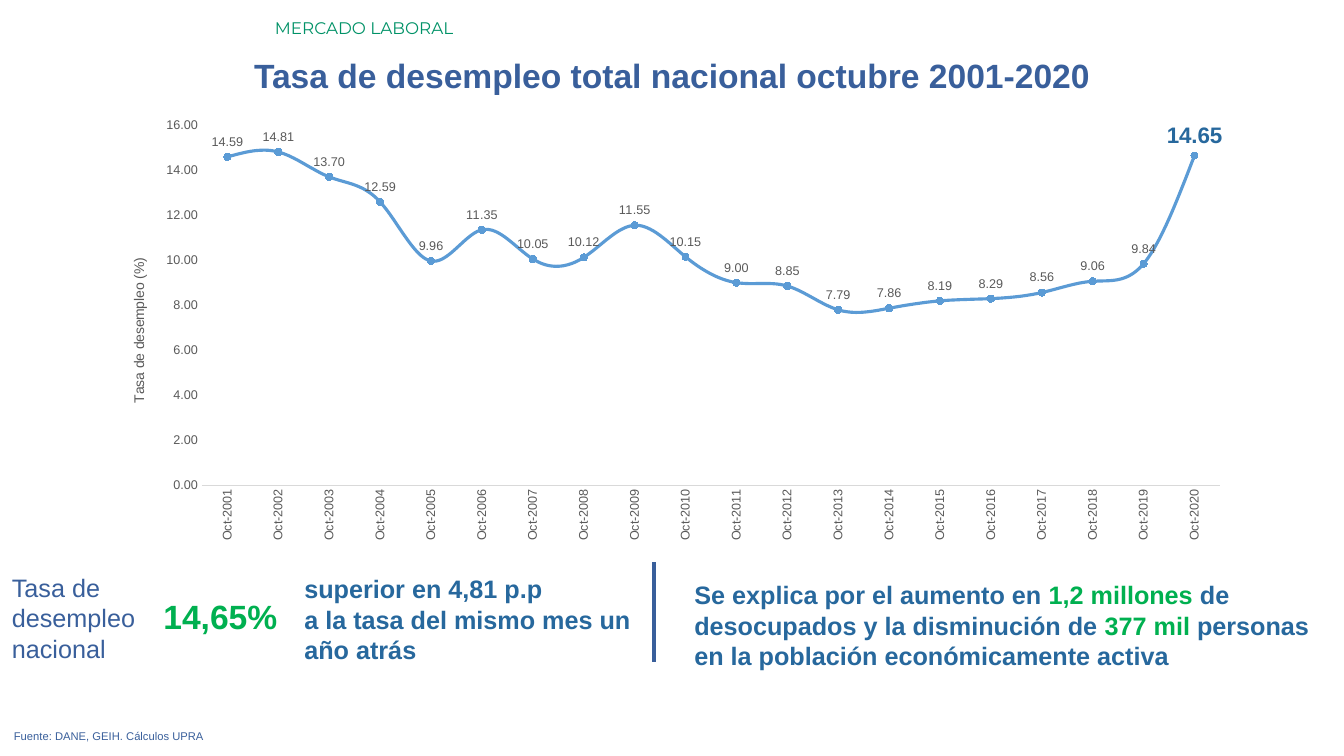
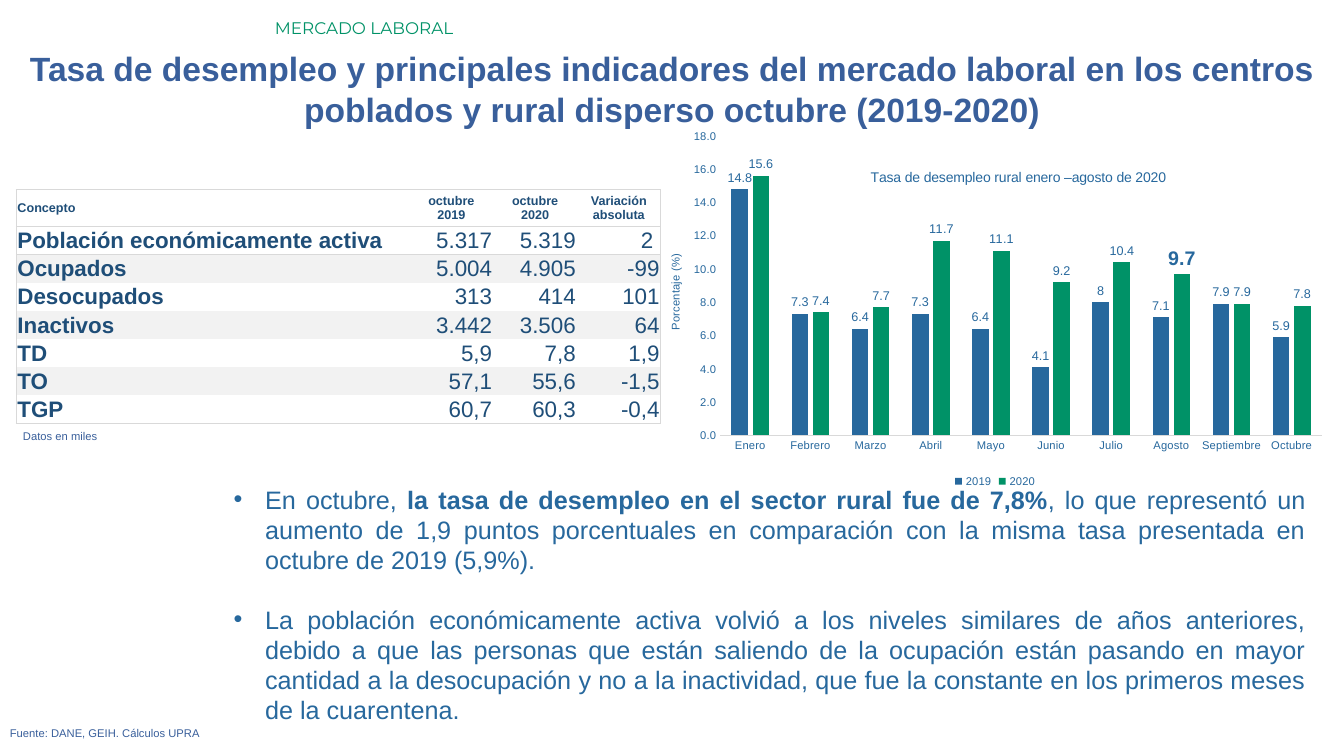
from lxml import etree
from pptx import Presentation
from pptx.chart.data import CategoryChartData
from pptx.dml.color import RGBColor
from pptx.enum.chart import (XL_CHART_TYPE, XL_LABEL_POSITION, XL_LEGEND_POSITION,
                             XL_MARKER_STYLE, XL_TICK_MARK)
from pptx.enum.shapes import MSO_CONNECTOR
from pptx.enum.text import MSO_ANCHOR, PP_ALIGN
from pptx.oxml.ns import qn
from pptx.util import Cm, Pt

LEFT, CENTER, RIGHT, JUSTIFY = PP_ALIGN.LEFT, PP_ALIGN.CENTER, PP_ALIGN.RIGHT, PP_ALIGN.JUSTIFY
MIDDLE = MSO_ANCHOR.MIDDLE
LINE, COLUMN = XL_CHART_TYPE.LINE_MARKERS, XL_CHART_TYPE.COLUMN_CLUSTERED
ABOVE, OUTSIDE = XL_LABEL_POSITION.ABOVE, XL_LABEL_POSITION.OUTSIDE_END
CIRCLE = XL_MARKER_STYLE.CIRCLE
NO_TICK = XL_TICK_MARK.NONE
BOTTOM = XL_LEGEND_POSITION.BOTTOM
STRAIGHT = MSO_CONNECTOR.STRAIGHT
PLAIN_TABLE = "{2D5ABB26-0587-4C30-8999-92F81FD0307C}"

COLORS = {
    "navy": "395F9B", "blue": "27689D", "green": "009267", "bright": "00B050",
    "table": "1F4E78", "rule": "D9D9D9", "band": "F2F2F2", "white": "FFFFFF",
    "grey": "595959", "line": "5B9BD5",
}


def rgb(name):
    return RGBColor.from_string(COLORS[name])


def set_font(font, **fmt):
    for key, value in {"name": "Arial", "bold": False, **fmt}.items():
        if key == "color":
            font.color.rgb = rgb(value)
        else:
            setattr(font, key, Pt(value) if key == "size" else value)


def set_bullet(p, indent=Cm(0.79)):
    pPr = p._p.get_or_add_pPr()
    pPr.set("marL", str(indent))
    pPr.set("indent", str(-indent))
    etree.SubElement(pPr, qn("a:buFont")).set("typeface", "Arial")
    etree.SubElement(pPr, qn("a:buChar")).set("char", "•")


def write(tf, paras, align=LEFT, bullet=False, gap=0, **fmt):
    """Fill a frame; a paragraph is a string or a list of (text, format) runs."""
    for i, runs in enumerate(paras):
        p = tf.add_paragraph() if i else tf.paragraphs[0]
        if i and gap:
            p.space_before = Pt(gap)
        if bullet:
            set_bullet(p)
        p.alignment = align
        for text, own in [(runs, {})] if isinstance(runs, str) else runs:
            r = p.add_run()
            r.text = text
            set_font(r.font, **{**fmt, **own})


def place(element, **values):
    """Give a chart part a manual layout in fractions of the chart."""
    for old in element.findall(qn("c:layout")):
        element.remove(old)
    layout = etree.Element(qn("c:layout"))
    manual = etree.SubElement(layout, qn("c:manualLayout"))
    modes = {"xMode": "edge", "yMode": "edge"}
    if "w" in values:
        modes = {"layoutTarget": "inner", **modes}
    for key, value in {**modes, **values}.items():
        etree.SubElement(manual, qn("c:" + key)).set("val", str(value))
    element.insert(0, layout)


def set_border(cell, sides):
    tcPr = cell._tc.get_or_add_tcPr()
    for side in sides:
        ln = etree.SubElement(tcPr, qn("a:ln" + side), w=str(Pt(0.5)))
        fill = etree.SubElement(ln, qn("a:solidFill"))
        etree.SubElement(fill, qn("a:srgbClr")).set("val", COLORS["rule"])


class Deck:
    """Shared style and the slide being built."""

    def __init__(self):
        self.prs = Presentation()
        self.prs.slide_width, self.prs.slide_height = Cm(33.87), Cm(19.05)

    def new_slide(self, title, title_top, footer_at):
        self.s = self.prs.slides.add_slide(self.prs.slide_layouts[6])
        self.text((6.68, 0.33, 27.18, 0.76), ["MERCADO LABORAL"],
                  name="Montserrat", size=12, color="green")
        self.text((0, title_top, 33.87, 1.27), [title], CENTER,
                  size=24, bold=True, color="navy")
        self.note((*footer_at, 32.79, 0.61), "Fuente: DANE, GEIH. Cálculos UPRA")

    def text(self, box, paras, align=LEFT, **fmt):
        tf = self.s.shapes.add_textbox(*map(Cm, box)).text_frame
        tf.word_wrap = True
        write(tf, paras, align, **fmt)

    def note(self, box, text):
        self.text(box, [text], JUSTIFY, size=8, color="navy")

    def divider(self, x, top, bottom):
        sp = self.s.shapes.add_connector(STRAIGHT, *map(Cm, (x, top, x, bottom)))
        sp.line.color.rgb = rgb("navy")
        sp.line.width = Pt(2.25)
        etree.SubElement(sp.element.spPr, qn("a:effectLst"))

    def table(self, left, top, widths, heights, rows):
        last_row, last_col = len(rows) - 1, len(widths) - 1
        frame = self.s.shapes.add_table(len(rows), len(widths), Cm(left), Cm(top),
                                        Cm(sum(widths)), Cm(sum(heights)))
        next(frame.element.iter(qn("a:tableStyleId"))).text = PLAIN_TABLE
        table = frame.table
        table.first_row = table.horz_banding = False
        for col, width in zip(table.columns, widths):
            col.width = Cm(width)
        for i, (row, height) in enumerate(zip(rows, heights)):
            table.rows[i].height = Cm(height)
            for j, value in enumerate(row):
                cell = table.cell(i, j)
                cell.margin_left = cell.margin_right = cell.margin_top = Cm(0.03)
                cell.margin_bottom = 0
                cell.vertical_anchor = MIDDLE
                edges = {"L": j == 0, "R": j == last_col, "T": i == 0,
                         "B": i in (0, 1, last_row)}
                set_border(cell, [side for side, drawn in edges.items() if drawn])
                cell.fill.solid()
                cell.fill.fore_color.rgb = rgb("band" if i and i % 2 == 0 else "white")
                align = LEFT if j == 0 else RIGHT if i else CENTER
                write(cell.text_frame, value.split("\n"), align, color="table",
                      size=16 if i else 9, bold=i == 0 or j == 0)

    def chart(self, kind, box, cats, series, plot_box, color, size, axis_title,
              axis_at, axis_title_size, top_value, axis_format):
        data = CategoryChartData()
        data.categories = cats
        for name, values in series.items():
            data.add_series(name, values)
        chart = self.s.shapes.add_chart(kind, *map(Cm, box), data).chart
        set_font(chart.font, size=size, color=color)
        chart.has_legend = chart.has_title = False
        chart.plots[0].vary_by_categories = False
        place(chart.element.find(".//" + qn("c:plotArea")), **dict(zip("xywh", plot_box)))

        cat, val = chart.category_axis, chart.value_axis
        for axis in (cat, val):
            axis.major_tick_mark = axis.minor_tick_mark = NO_TICK
            axis.has_major_gridlines = False
            set_font(axis.tick_labels.font, size=size, color=color)
        cat.format.line.color.rgb = rgb("rule")
        cat.format.line.width = Pt(0.75)
        val.format.line.fill.background()
        val.minimum_scale, val.maximum_scale, val.major_unit = 0, top_value, 2
        val.tick_labels.number_format = axis_format
        val.tick_labels.number_format_is_linked = False
        val.has_title = True
        self.chart_title(val.axis_title, axis_title, axis_at, axis_title_size, color)
        return chart

    def chart_title(self, title, text, at, size, color):
        place(title.element, x=at[0], y=at[1])
        write(title.text_frame, [text], CENTER, size=size, color=color)

    def labels(self, series, position, color, number_format="General"):
        labels = series.data_labels
        labels.show_value = True
        labels.position = position
        labels.number_format = number_format
        labels.number_format_is_linked = False
        set_font(labels.font, size=9, color=color)

    def highlight(self, series, index, position, size):
        label = series.points[index].data_label
        set_font(label.font, size=size, bold=True, color="blue")
        label.position = position


def unemployment_slide(deck):
    deck.new_slide("Tasa de desempleo total nacional octubre 2001-2020", 1.27, (0.1, 18.26))
    rates = [14.59, 14.81, 13.7, 12.59, 9.96, 11.35, 10.05, 10.12, 11.55, 10.15,
             9, 8.85, 7.79, 7.86, 8.19, 8.29, 8.56, 9.06, 9.84, 14.65]
    chart = deck.chart(
        LINE, (3.07, 2.97, 28.07, 11.3), [f"Oct-{year}" for year in range(2001, 2021)],
        {"Series 1": rates}, (0.072, 0.016, 0.914, 0.803), "grey", 9,
        "Tasa de desempleo (%)", (0.005, 0.307), 10, 16, "0.00")
    chart.category_axis.tick_labels.font
    body = chart.category_axis.element if hasattr(chart.category_axis, "element") else None
    body = chart.element.find(f".//{qn('c:catAx')}/{qn('c:txPr')}/{qn('a:bodyPr')}")
    body.set("rot", "-5400000")
    body.set("vert", "horz")
    rate = chart.plots[0].series[0]
    rate.smooth = True
    rate.format.line.color.rgb = rgb("line")
    rate.format.line.width = Pt(2.25)
    rate.marker.style, rate.marker.size = CIRCLE, 5
    rate.marker.format.fill.solid()
    rate.marker.format.fill.fore_color.rgb = rgb("line")
    rate.marker.format.line.color.rgb = rgb("line")
    deck.labels(rate, ABOVE, "grey", "#,##0.00")
    deck.highlight(rate, len(rates) - 1, ABOVE, 16)

    deck.text((0.05, 14.3, 5.64, 2.57), ["Tasa de desempleo nacional"], size=18, color="navy")
    deck.text((3.3, 14.88, 3.94, 1.27), ["14,65%"], RIGHT, size=24, bold=True, color="bright")
    strong = {"size": 18, "bold": True, "color": "blue"}
    deck.text((7.42, 14.33, 9.22, 2.57),
              ["superior en 4,81 p.p", "a la tasa del mismo mes un año atrás"], **strong)
    deck.divider(16.48, 14.17, 16.69)
    figure = {"color": "bright"}
    deck.text((17.25, 14.48, 16.21, 2.57), [[
        ("Se explica por el aumento en ", {}), ("1,2 millones ", figure),
        ("de desocupados y la disminución de ", {}), ("377 mil", figure),
        (" personas en la población económicamente activa", {})]], **strong)


def rural_slide(deck):
    deck.new_slide("Tasa de desempleo y principales indicadores del mercado laboral en los "
                   "centros poblados y rural disperso octubre (2019-2020)", 1.09, (0, 18.19))
    deck.text((5.64, 12.07, 27.51, 6.4), [
        [("En octubre, ", {}),
         ("la tasa de desempleo en el sector rural fue de 7,8%", {"bold": True}),
         (", lo que representó un aumento de 1,9 puntos porcentuales en comparación con la "
          "misma tasa presentada en octubre de 2019 (5,9%).", {})],
        "La población económicamente activa volvió a los niveles similares de años anteriores, "
        "debido a que las personas que están saliendo de la ocupación están pasando en mayor "
        "cantidad a la desocupación y no a la inactividad, que fue la constante en los primeros "
        "meses de la cuarentena."], JUSTIFY, bullet=True, gap=21, size=18, color="blue")
    deck.note((0.33, 10.69, 15.88, 0.61), "Datos en miles")
    rows = [
        ("Concepto", "octubre\n2019", "octubre\n2020", "Variación\nabsoluta"),
        ("Población económicamente activa", "5.317", "5.319", "2 "),
        ("Ocupados", "5.004", "4.905", "-99"),
        ("Desocupados", "313", "414", "101"),
        ("Inactivos", "3.442", "3.506", "64"),
        ("TD", "5,9", "7,8", "1,9"),
        ("TO", "57,1", "55,6", "-1,5"),
        ("TGP", "60,7", "60,3", "-0,4"),
    ]
    deck.table(0.41, 4.78, [9.91] + [2.11] * 3, [0.92] + [0.71] * 7, rows)

    months = ["Enero", "Febrero", "Marzo", "Abril", "Mayo", "Junio", "Julio", "Agosto",
              "Septiembre", "Octubre"]
    rates = {"2019": [14.8, 7.3, 6.4, 7.3, 6.4, 4.1, 8, 7.1, 7.9, 5.9],
             "2020": [15.6, 7.4, 7.7, 11.7, 11.1, 9.2, 10.4, 9.7, 7.9, 7.8]}
    chart = deck.chart(COLUMN, (16.61, 2.69, 16.94, 9.7), months, rates,
                       (0.091, 0.076, 0.895, 0.778), "blue", 8,
                       "Porcentaje (%)", (0.01, 0.377), 8, 18, "#,##0.0")
    chart.has_title = True
    deck.chart_title(chart.chart_title, "Tasa de desempleo rural enero –agosto de 2020",
                     (0.311, 0.153), 10, "blue")
    chart.has_legend = True
    chart.legend.position = BOTTOM
    chart.legend.include_in_layout = False
    set_font(chart.legend.font, size=8, color="blue")
    plot = chart.plots[0]
    plot.gap_width, plot.overlap = 136, -27
    for year, color in zip(plot.series, ("blue", "green")):
        year.format.fill.solid()
        year.format.fill.fore_color.rgb = rgb(color)
        year.invert_if_negative = False
        deck.labels(year, OUTSIDE, "blue")
    deck.highlight(plot.series[1], months.index("Agosto"), OUTSIDE, 14)


def main():
    deck = Deck()
    unemployment_slide(deck)
    rural_slide(deck)
    deck.prs.save("out.pptx")


if __name__ == "__main__":
    main()
